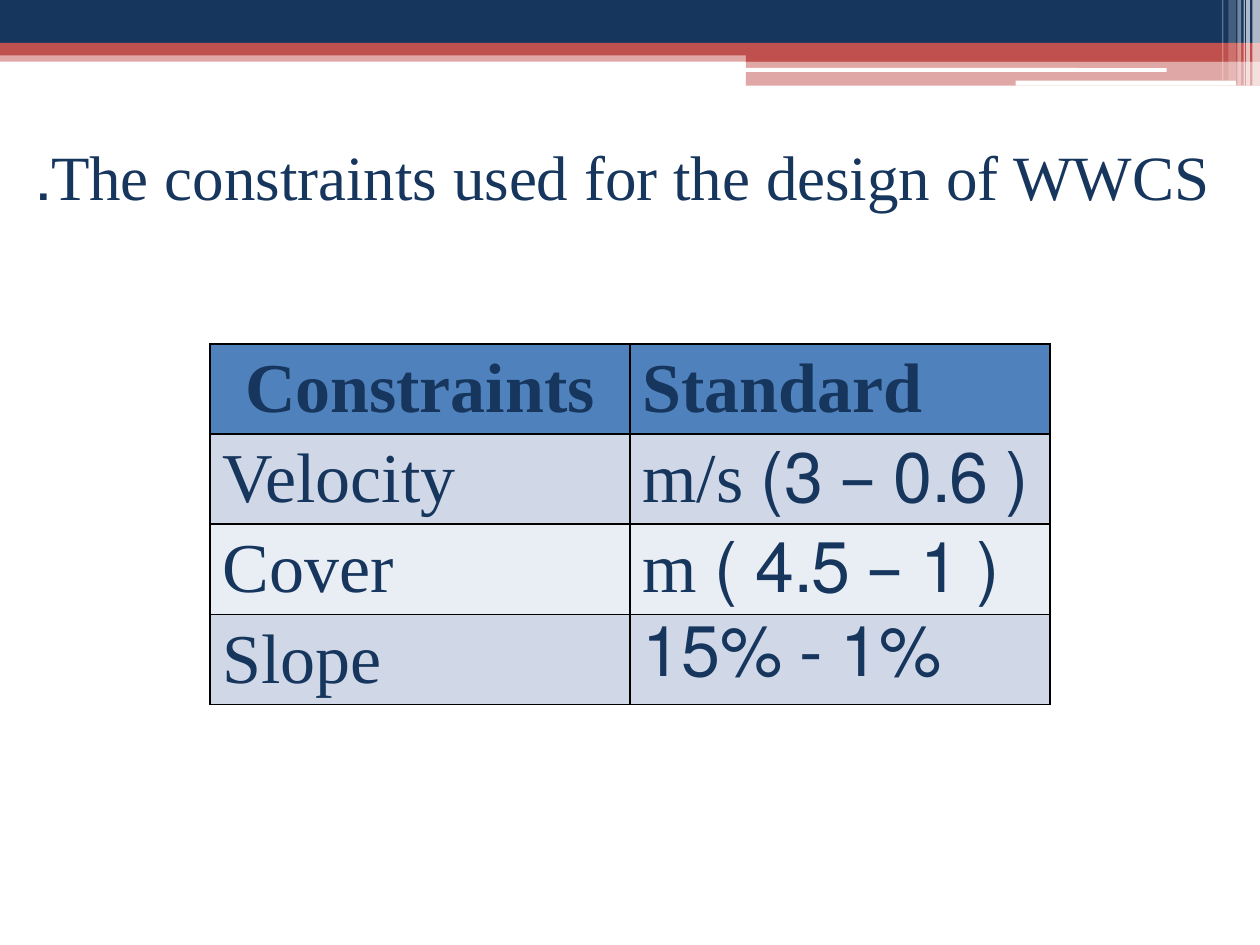
import pptx
import pptx.dml.color
import pptx.enum.shapes
import pptx.enum.text
import pptx.oxml.ns
import pptx.util
from lxml import etree

NAVY, RED, WHITE = "17365D", "C0504D", "FFFFFF"
HEADER, BAND_DARK, BAND_LIGHT = "4F81BD", "D0D8E8", "E9EDF4"
INCH = pptx.util.Inches
ALIGN = pptx.enum.text.PP_ALIGN
qn = pptx.oxml.ns.qn


def paint(fill, color, opacity=100):
    fill.solid()
    fill.fore_color.rgb = pptx.dml.color.RGBColor.from_string(color)
    if opacity < 100:
        node = fill._xPr.find(".//" + qn("a:srgbClr"))
        etree.SubElement(node, qn("a:alpha"), val=str(opacity * 1000))


def write(text_frame, text, size, bold=False, alignment=ALIGN.LEFT):
    """Fill the frame with one right-to-left paragraph."""
    paragraph = text_frame.paragraphs[0]
    paragraph.alignment = alignment
    paragraph._p.get_or_add_pPr().set("rtl", "1")
    run = paragraph.add_run()
    run.text = text
    font_format = {"name": "Times New Roman", "size": pptx.util.Pt(size), "bold": bold}
    for name, value in font_format.items():
        setattr(run.font, name, value)
    paint(run.font.fill, NAVY)


presentation = pptx.Presentation()
presentation.slide_width = INCH(10)
presentation.slide_height = INCH(7.5)
slide = presentation.slides.add_slide(presentation.slide_layouts[5])

# Header bands and stripes: left, top, width, height, colour, opacity
RECTANGLE = pptx.enum.shapes.MSO_SHAPE.RECTANGLE
ROUNDED = pptx.enum.shapes.MSO_SHAPE.ROUNDED_RECTANGLE
header_parts = [
    (RECTANGLE, 0, 0.4, 10, 0.09, RED, 50),
    (RECTANGLE, 0, 0, 10, 0.34, NAVY, 100),
    (RECTANGLE, 0, 0.34, 10, 0.1, RED, 100),
    (RECTANGLE, 5.92, 0.39, 4.08, 0.1, RED, 100),
    (RECTANGLE, 5.92, 0.48, 4.08, 0.2, RED, 50),
    (ROUNDED, 5.91, 0.54, 3.35, 0.03, WHITE, 100),
    (ROUNDED, 8.06, 0.64, 1.75, 0.04, WHITE, 100),
]
stripes = [
    (9.94, 0.06, 0.68, 65), (9.89, 0.03, 0.68, 65), (9.87, 0.01, 0.68, 60),
    (9.82, 0.03, 0.68, 40), (9.75, 0.06, 0.64, 20), (9.7, 0.01, 0.64, 30),
]
for left, width, height, opacity in stripes:
    header_parts.append((RECTANGLE, left, 0, width, height, WHITE, opacity))

for kind, left, top, width, height, color, opacity in header_parts:
    shape = slide.shapes.add_shape(kind, INCH(left), INCH(top), INCH(width), INCH(height))
    shape.shadow.inherit = False
    shape.line.fill.background()
    paint(shape.fill, color, opacity)

# Title
title = slide.shapes.title
title_box = {"left": 0.18, "top": 0.99, "width": 9.65, "height": 1.17}
for name, value in title_box.items():
    setattr(title, name, INCH(value))
title_format = {
    "vertical_anchor": pptx.enum.text.MSO_ANCHOR.TOP,
    "auto_size": pptx.enum.text.MSO_AUTO_SIZE.NONE,
    "margin_top": INCH(0.1),
}
for name, value in title_format.items():
    setattr(title.text_frame, name, value)
write(title.text_frame, "The constraints used for the design of WWCS.", 36)

# Table of constraints, centred on the slide
rows = [
    ("Constraints", "Standard"),
    ("Velocity", "( 0.6 – 3) m/s"),
    ("Cover", "( 1 – 4.5 ) m"),
    ("Slope", "1% - 15%"),
]
row_height = 0.71
table_width = presentation.slide_width * 2 // 3
table_left = (presentation.slide_width - table_width) // 2
table = slide.shapes.add_table(
    len(rows), 2, table_left, INCH(2.73), table_width, INCH(row_height * len(rows))
).table

for row_index, texts in enumerate(rows):
    is_header = row_index == 0
    band = HEADER if is_header else (BAND_DARK if row_index % 2 else BAND_LIGHT)
    for column_index, text in enumerate(texts):
        cell = table.cell(row_index, column_index)
        centred = is_header and column_index == 0
        write(cell.text_frame, text, 40, is_header, ALIGN.CENTER if centred else ALIGN.LEFT)
        properties = cell._tc.get_or_add_tcPr()
        for side in ("a:lnL", "a:lnR", "a:lnT", "a:lnB"):
            border = etree.SubElement(properties, qn(side), w=str(pptx.util.Pt(1)))
            border_fill = etree.SubElement(border, qn("a:solidFill"))
            etree.SubElement(border_fill, qn("a:srgbClr"), val="000000")
        paint(cell.fill, band)

presentation.save("out.pptx")
